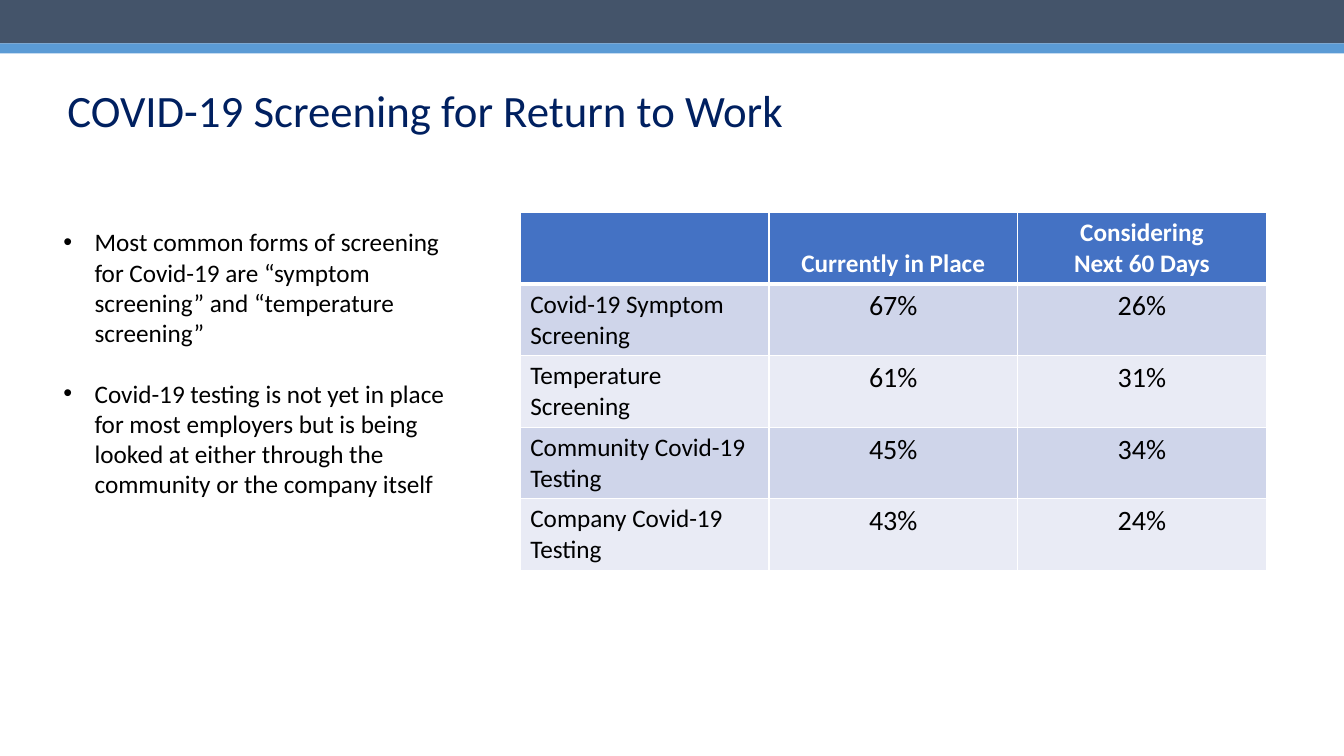
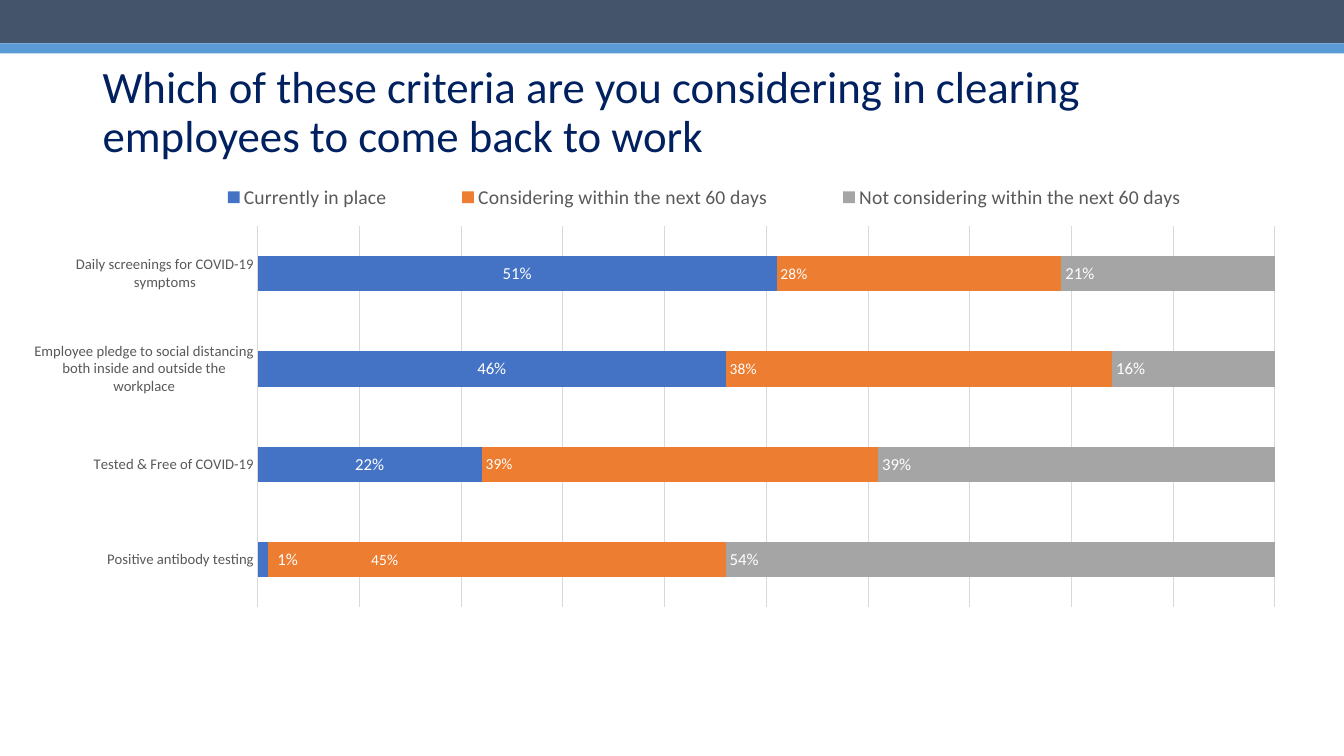
import collections

import lxml.etree
import pptx
import pptx.chart.data
import pptx.dml.color
import pptx.enum.chart
import pptx.enum.shapes
import pptx.enum.text
import pptx.oxml.ns
import pptx.util

Inches = pptx.util.Inches
Pt = pptx.util.Pt
qn = pptx.oxml.ns.qn
Box = collections.namedtuple("Box", "left top width height")

FONT = "Calibri"
SLIDE_WIDTH, SLIDE_HEIGHT = 13.33, 7.5
COLORS = {
    "band": "44546A", "stripe": "5B9BD5", "title": "002060",
    "text": "000000", "white": "FFFFFF", "header": "4472C4",
    "odd_row": "CFD5EA", "even_row": "E9EBF5",
    "label": "595959", "grid": "D9D9D9",
    "current": "4472C4", "considering": "ED7D31", "not_considering": "A5A5A5",
}
BANDS = [("band", Box(0, 0, SLIDE_WIDTH, 0.43)),
         ("stripe", Box(0, 0.43, SLIDE_WIDTH, 0.1))]

SCREENING_POINTS = [
    "Most common forms of screening for Covid-19 are “symptom screening” "
    "and “temperature screening”",
    "Covid-19 testing is not yet in place for most employers but is being "
    "looked at either through the community or the company itself",
]
SCREENING_ROWS = [
    ("", "Currently in Place", "Considering\nNext 60 Days"),
    ("Covid-19 Symptom Screening", "67%", "26%"),
    ("Temperature Screening", "61%", "31%"),
    ("Community Covid-19 Testing", "45%", "34%"),
    ("Company Covid-19 Testing", "43%", "24%"),
]
CRITERIA = [
    "Positive antibody testing",
    "Tested & Free of COVID-19",
    "Employee pledge to social distancing both inside and outside the workplace",
    "Daily screenings for COVID-19 symptoms",
]
LABEL_POSITION = pptx.enum.chart.XL_LABEL_POSITION
Answer = collections.namedtuple("Answer", "name values color size position first_shift")
ANSWERS = [
    Answer("Currently in place", (0.01, 0.22, 0.46, 0.51),
           "current", 12, LABEL_POSITION.CENTER, 0.02),
    Answer("Considering within the next 60 days", (0.45, 0.39, 0.38, 0.28),
           "considering", 11, LABEL_POSITION.INSIDE_BASE, 0.08),
    Answer("Not considering within the next 60 days", (0.54, 0.39, 0.16, 0.21),
           "not_considering", 12, LABEL_POSITION.INSIDE_BASE, 0),
]


def rgb(color):
    return pptx.dml.color.RGBColor.from_string(COLORS[color])


def inches(box):
    return [Inches(length) for length in box]


def style(font, size, color, bold=False):
    font.name, font.size, font.bold = FONT, Pt(size), bold
    font.color.rgb = rgb(color)


def paint(fill, color):
    fill.solid()
    fill.fore_color.rgb = rgb(color)


def add_text_frame(slide, box):
    frame = slide.shapes.add_textbox(*inches(box)).text_frame
    frame.word_wrap = True
    return frame


def add_titled_slide(deck, title, title_box):
    slide = deck.slides.add_slide(deck.slide_layouts[6])
    for color, box in BANDS:
        band = slide.shapes.add_shape(
            pptx.enum.shapes.MSO_SHAPE.RECTANGLE, *inches(box))
        band.shadow.inherit = False
        paint(band.fill, color)
        band.line.fill.background()
    frame = add_text_frame(slide, title_box)
    frame.vertical_anchor = pptx.enum.text.MSO_ANCHOR.MIDDLE
    frame.text = title
    heading = frame.paragraphs[0]
    heading.line_spacing = 0.9
    style(heading.runs[0].font, 32, "title")
    return slide


def add_bullets(slide, box, points):
    frame = add_text_frame(slide, box)
    frame.text = "\n".join(points)
    for index, paragraph in enumerate(frame.paragraphs):
        if index:
            paragraph.space_before = Pt(21.6)
        properties = paragraph._p.get_or_add_pPr()
        properties.set("marL", str(Inches(0.31)))
        properties.set("indent", str(-Inches(0.31)))
        lxml.etree.SubElement(properties, qn("a:buFont"), typeface="Arial")
        lxml.etree.SubElement(properties, qn("a:buChar"), char="•")
        style(paragraph.runs[0].font, 18, "text")


def add_cell_borders(cell, widths):
    properties = cell._tc.get_or_add_tcPr()
    for side, width in widths.items():
        line = lxml.etree.SubElement(properties, qn(f"a:ln{side}"), w=str(Pt(width)))
        fill = lxml.etree.SubElement(line, qn("a:solidFill"))
        lxml.etree.SubElement(fill, qn("a:srgbClr"), val=COLORS["white"])


def add_screening_table(slide, box, rows):
    columns = len(rows[0])
    table = slide.shapes.add_table(len(rows), columns, *inches(box)).table
    for row_index, row in enumerate(rows):
        is_header = row_index == 0
        fill = "header" if is_header else ("odd_row" if row_index % 2 else "even_row")
        text_color = "white" if is_header else "text"
        for column_index, text in enumerate(row):
            size = 20 if column_index and not is_header else 18
            cell = table.cell(row_index, column_index)
            add_cell_borders(cell, {"L": 1, "R": 1,
                                    "T": 3 if row_index == 1 else 1,
                                    "B": 3 if is_header else 1})
            paint(cell.fill, fill)
            cell.text_frame.text = text
            if is_header:
                cell.vertical_anchor = pptx.enum.text.MSO_ANCHOR.BOTTOM
            for paragraph in cell.text_frame.paragraphs:
                if column_index:
                    paragraph.alignment = pptx.enum.text.PP_ALIGN.CENTER
                for run in paragraph.runs:
                    style(run.font, size, text_color, is_header)


def make_layout(**settings):
    layout = lxml.etree.Element(qn("c:layout"))
    manual = lxml.etree.SubElement(layout, qn("c:manualLayout"))
    for tag, value in settings.items():
        lxml.etree.SubElement(manual, qn(f"c:{tag}"), val=str(value))
    return layout


def place_part(part, **settings):
    for previous in part.findall(qn("c:layout")):
        part.remove(previous)
    position = part.find(qn("c:legendPos"))
    layout = make_layout(**settings)
    if position is None:
        part.insert(0, layout)
    else:
        position.addnext(layout)


def format_answer(series, answer):
    paint(series.format.fill, answer.color)
    labels = series.data_labels
    labels.show_value = True
    labels.number_format, labels.number_format_is_linked = "0%", False
    labels.position = answer.position
    style(labels.font, answer.size, "white")
    for leader_lines in labels._element.findall(qn("c:showLeaderLines")):
        leader_lines.set("val", "0")
    if answer.first_shift:
        label = series.points[0].data_label
        style(label.font, answer.size, "white")
        label.position = answer.position
        index = label._dLbl.find(qn("c:idx"))
        index.addnext(make_layout(x=answer.first_shift, y=0))


def add_criteria_chart(slide, box):
    data = pptx.chart.data.CategoryChartData(number_format="0%")
    data.categories = CRITERIA
    for answer in ANSWERS:
        data.add_series(answer.name, answer.values)
    chart = slide.shapes.add_chart(
        pptx.enum.chart.XL_CHART_TYPE.BAR_STACKED, *inches(box), data).chart
    style(chart.font, 10, "text")
    chart.has_title = False
    chart.has_legend = True
    legend = chart.legend
    legend.position = pptx.enum.chart.XL_LEGEND_POSITION.TOP
    legend.include_in_layout = True
    style(legend.font, 14, "label")
    place_part(legend._element, xMode="edge", yMode="edge",
               x=0.1, y=0.01, w=0.88, h=0.07)

    plot = chart.plots[0]
    plot.gap_width, plot.overlap, plot.vary_by_categories = 170, 100, False
    place_part(chart._chartSpace.chart.plotArea, layoutTarget="inner",
               xMode="edge", yMode="edge", x=0.18, y=0.11, w=0.82, h=0.86)
    for series, answer in zip(plot.series, ANSWERS):
        format_answer(series, answer)

    criteria_axis = chart.category_axis
    criteria_axis.major_tick_mark = pptx.enum.chart.XL_TICK_MARK.NONE
    style(criteria_axis.tick_labels.font, 10.5, "label")
    share_axis = chart.value_axis
    share_axis.minimum_scale, share_axis.maximum_scale = 0, 1
    share_axis.major_unit = 0.1
    share_axis.has_major_gridlines = True
    share_axis.visible = False
    for line in (criteria_axis.format.line, share_axis.major_gridlines.format.line):
        line.color.rgb = rgb("grid")
        line.width = Pt(0.75)


def build_screening_slide(deck):
    slide = add_titled_slide(deck, "COVID-19 Screening for Return to Work",
                             Box(0.57, 0.4, 11.5, 1.45))
    add_screening_table(slide, Box(5.16, 2.11, 7.4, 3.55), SCREENING_ROWS)
    add_bullets(slide, Box(0.53, 2.2, 4.01, 2.83), SCREENING_POINTS)


def build_criteria_slide(deck):
    slide = add_titled_slide(
        deck, "Which of these criteria are you considering in clearing "
        "employees to come back to work", Box(0.92, 0.4, 11.5, 1.45))
    add_criteria_chart(slide, Box(0.34, 1.76, 12.31, 4.4))


def main():
    deck = pptx.Presentation()
    deck.slide_width, deck.slide_height = Inches(SLIDE_WIDTH), Inches(SLIDE_HEIGHT)
    build_screening_slide(deck)
    build_criteria_slide(deck)
    deck.save("out.pptx")


if __name__ == "__main__":
    main()
